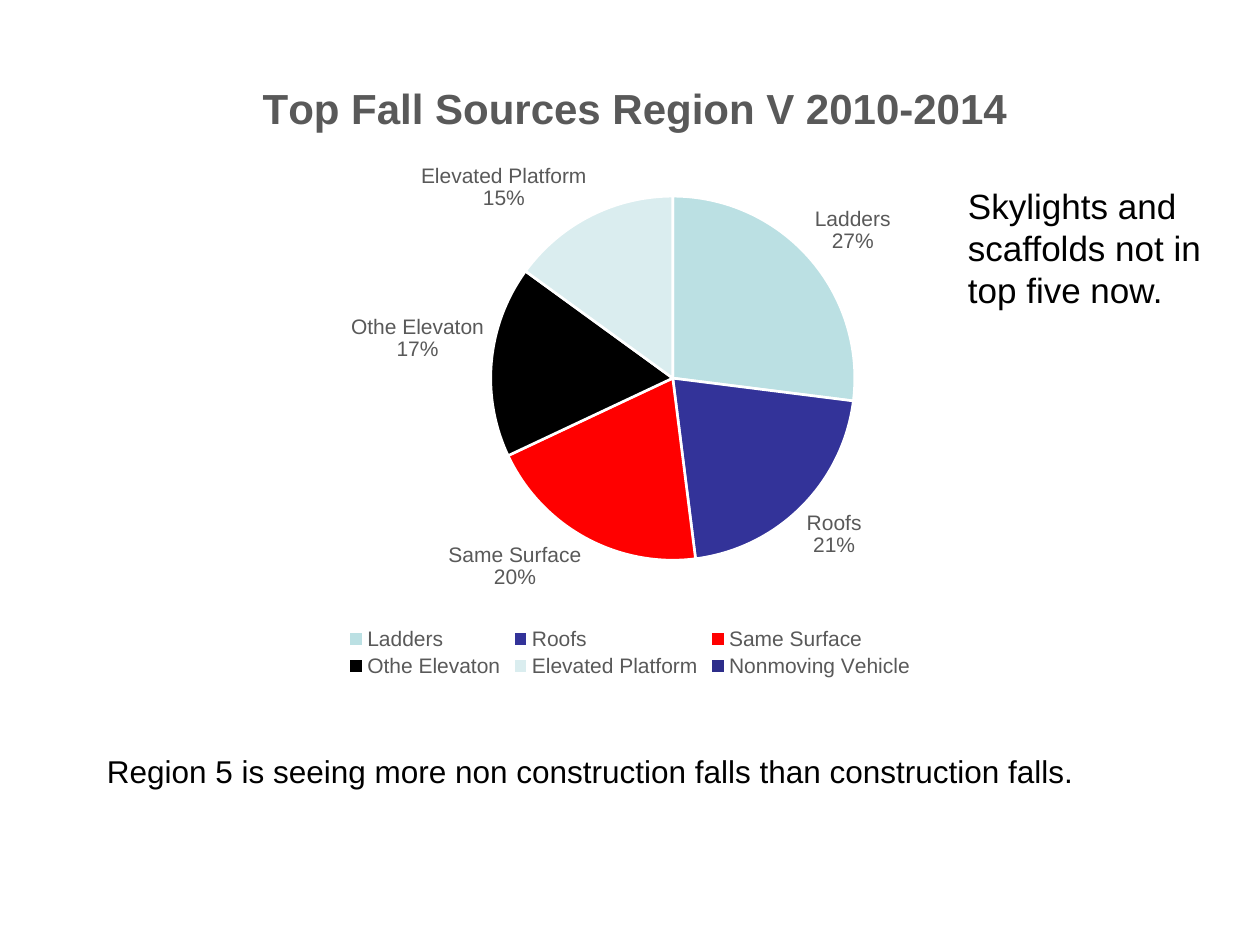
"""Builds the slide on fall sources with a pie chart and two remarks."""
from dataclasses import dataclass

from lxml import etree
from pptx import Presentation
from pptx.chart.data import CategoryChartData
from pptx.dml.color import RGBColor
from pptx.enum.chart import XL_CHART_TYPE, XL_LABEL_POSITION, XL_LEGEND_POSITION
from pptx.oxml.ns import qn
from pptx.util import Inches, Pt

PIE = XL_CHART_TYPE.PIE
OUTSIDE_END = XL_LABEL_POSITION.OUTSIDE_END
BOTTOM = XL_LEGEND_POSITION.BOTTOM

SOURCES = [
    ("Ladders", 27, "BBE0E3"),
    ("Roofs", 21, "333399"),
    ("Same Surface", 20, "FF0000"),
    ("Othe Elevaton", 17, "000000"),
    ("Elevated Platform", 15, "DAEDEF"),
    ("Nonmoving Vehicle", None, "2D2D8A"),
]


@dataclass(frozen=True)
class Theme:
    font: str = "Arial"
    ink: str = "000000"
    muted: str = "595959"
    paper: str = "FFFFFF"
    title_size: int = 24
    remark_size: int = 20
    note_size: int = 18
    label_size: int = 12
    border_width: float = 1.5
    units_per_inch: int = 12


class SlideBuilder:
    def __init__(self, presentation, theme):
        self.theme = theme
        self.slide = presentation.slides.add_slide(presentation.slide_layouts[6])
        self.paint(self.slide.background.fill, theme.paper)

    def place(self, *units):
        return [Inches(unit / self.theme.units_per_inch) for unit in units]

    def paint(self, fill, color):
        fill.solid()
        fill.fore_color.rgb = RGBColor.from_string(color)

    def style(self, font, size, color, bold=False):
        font.name, font.size, font.bold = self.theme.font, Pt(size), bold
        font.color.rgb = RGBColor.from_string(color)

    def text(self, area, wording, size):
        frame = self.slide.shapes.add_textbox(*self.place(*area)).text_frame
        frame.word_wrap = True
        run = frame.paragraphs[0].add_run()
        run.text = wording
        self.style(run.font, size, self.theme.ink)

    def set_layout(self, parent, index, **shares):
        for layout in parent.findall(qn("c:layout")):
            parent.remove(layout)
        layout = etree.Element(qn("c:layout"))
        manual = etree.SubElement(layout, qn("c:manualLayout"))
        if "w" in shares:
            etree.SubElement(manual, qn("c:layoutTarget"), val="inner")
        for side in ("x", "y"):
            etree.SubElement(manual, qn(f"c:{side}Mode"), val="edge")
        for name, share in shares.items():
            etree.SubElement(manual, qn(f"c:{name}"), val=str(share))
        parent.insert(index, layout)

    def pie(self, area, title, sources):
        theme = self.theme
        data = CategoryChartData()
        data.categories = [name for name, _, _ in sources]
        data.add_series("Series 1", [value for _, value, _ in sources])
        chart = self.slide.shapes.add_chart(PIE, *self.place(*area), data).chart
        self.style(chart.font, theme.label_size, theme.muted)

        run = chart.chart_title.text_frame.paragraphs[0].add_run()
        run.text = title
        self.style(run.font, theme.title_size, theme.muted, bold=True)
        chart.chart_title.include_in_layout = False
        chart_element = chart.element.find(qn("c:chart"))
        self.set_layout(chart_element.find(qn("c:title")), 1, x=0.15, y=0.05)
        self.set_layout(chart_element.find(qn("c:plotArea")), 0,
                        x=0.37, y=0.24, w=0.34, h=0.57)

        chart.has_legend = True
        chart.legend.position = BOTTOM
        chart.legend.include_in_layout = False
        self.style(chart.legend.font, theme.label_size, theme.muted)

        plot = chart.plots[0]
        plot.vary_by_categories = True
        for index, (_, _, color) in enumerate(sources):
            piece = plot.series[0].points[index].format
            self.paint(piece.fill, color)
            self.paint(piece.line.fill, theme.paper)
            piece.line.width = Pt(theme.border_width)

        labels = plot.series[0].data_labels
        labels.show_category_name = True
        labels.show_percentage = True
        labels.show_value = False
        labels.position = OUTSIDE_END
        self.style(labels.font, theme.label_size, theme.muted)


def main():
    theme = Theme()
    presentation = Presentation()
    presentation.slide_width, presentation.slide_height = Inches(10), Inches(7.5)
    builder = SlideBuilder(presentation, theme)
    builder.text((9, 71, 102, 11),
                 "Region 5 is seeing more non construction falls than construction falls.",
                 theme.note_size)
    builder.pie((9, 4, 102, 61), "Top Fall Sources Region V 2010-2014", SOURCES)
    builder.text((91, 17, 26, 18), "Skylights and scaffolds not in top five now.",
                 theme.remark_size)
    presentation.save("out.pptx")


if __name__ == "__main__":
    main()
